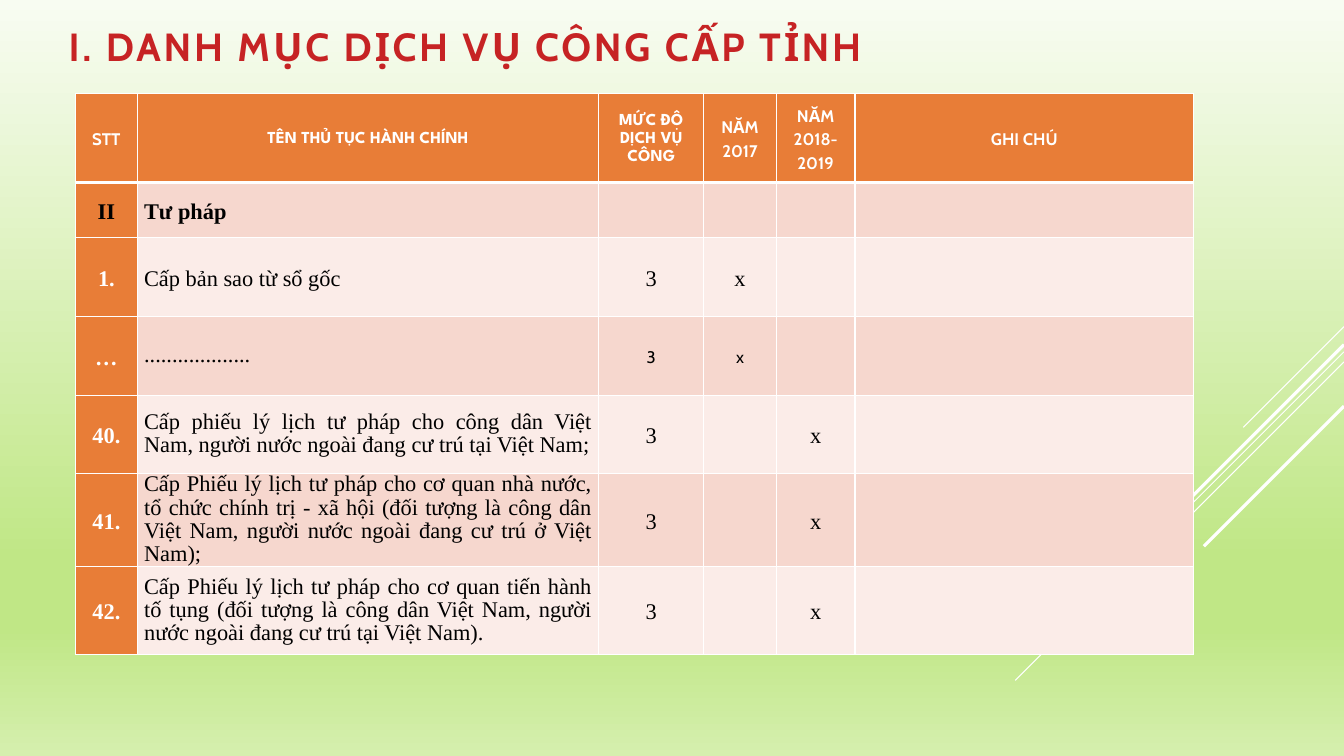
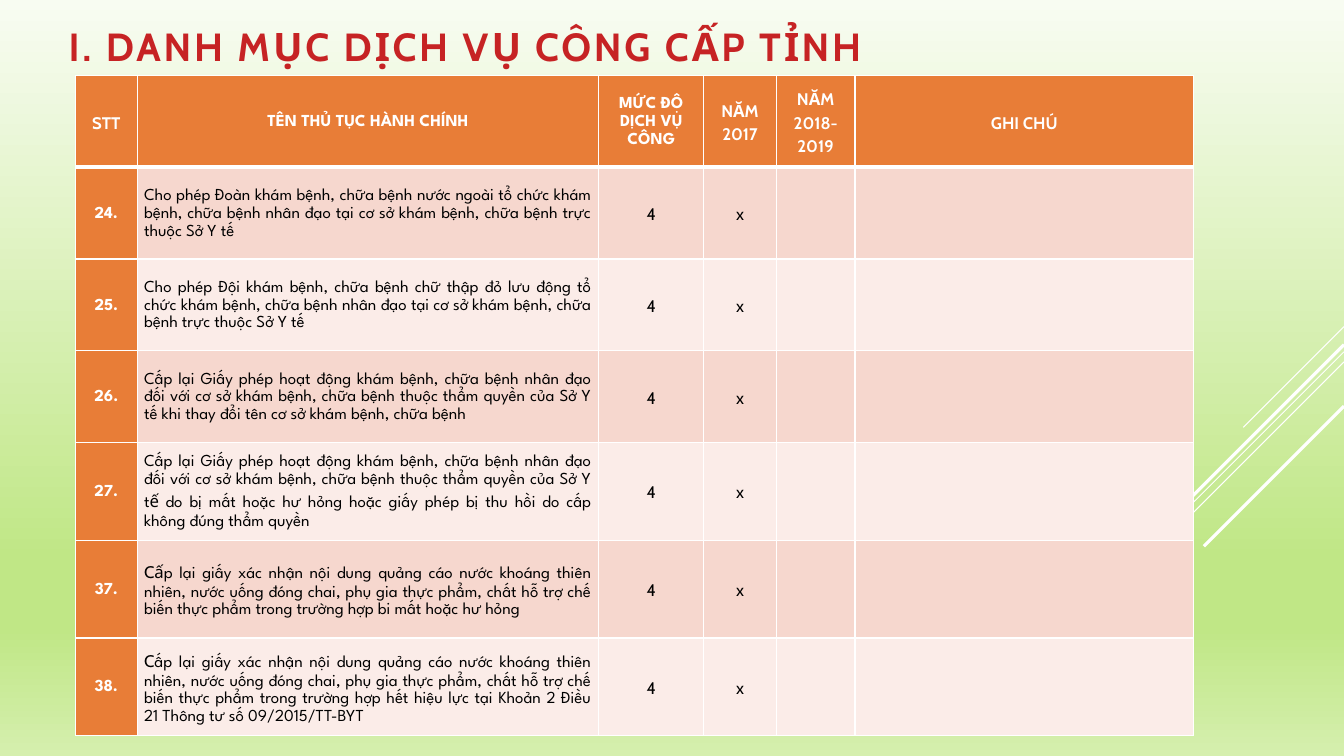
from dataclasses import dataclass, replace

from lxml import etree
from pptx import Presentation
from pptx.dml.color import RGBColor
from pptx.enum.shapes import MSO_CONNECTOR
from pptx.enum.text import MSO_ANCHOR, MSO_AUTO_SIZE, PP_ALIGN
from pptx.oxml import parse_xml
from pptx.oxml.ns import nsdecls, qn
from pptx.util import Inches, Pt

STRAIGHT = MSO_CONNECTOR.STRAIGHT
MIDDLE = MSO_ANCHOR.MIDDLE
LEFT, CENTER, JUSTIFY = PP_ALIGN.LEFT, PP_ALIGN.CENTER, PP_ALIGN.JUSTIFY


@dataclass(frozen=True)
class Theme:
    sans: str = "Cabin"
    round: str = "League Spartan"
    serif: str = "Times New Roman"
    red: str = "C62324"
    orange: str = "E87D37"
    bands: tuple = ("F6D7CE", "FBECE8")
    white: str = "FFFFFF"
    black: str = "000000"
    sky: tuple = ((0, "F8FCF2"), (74, "C0E786"), (83, "C0E786"), (100, "D5EFAE"))
    title: int = 28
    large: int = 16
    small: int = 12


T = Theme()


@dataclass(frozen=True)
class Style:
    font: str
    size: int
    color: str = T.black
    bold: bool = False
    align: int = CENTER
    lead: object = 1.15
    gap: int = 0


# Text styles
HEAD = Style(T.sans, T.small, T.white, True)
MARK = Style(T.sans, T.small)
BIG = Style(T.serif, T.large)
BIG_NUM = replace(BIG, color=T.white, bold=True, gap=6)
BIG_NAME = replace(BIG, align=JUSTIFY, lead=Pt(16.5))
NUM = replace(HEAD, font=T.round, gap=6)
NAME = Style(T.round, T.small, align=JUSTIFY, gap=6)

# Shared content
TITLE = "I. DANH MỤC DỊCH VỤ CÔNG CẤP TỈNH"
HEADS = [("STT", T.sans), ("TÊN THỦ TỤC HÀNH CHÍNH", T.round),
         ("MỨC ĐỘ DỊCH VỤ CÔNG", T.round), ("NĂM 2017", T.sans),
         ("NĂM 2018-2019", T.sans), ("GHI CHÚ", T.sans)]
COLS = [0.61, 4.58, 1.04, 0.72, 0.78, 3.36]
Y2017, Y2018 = 3, 4

# Corner rays: right end y, run along the diagonal, width
RAYS = [(3.24, 1, 0.75), (3.49, 3.26, 0.75), (3.59, 2.07, 0.75),
        (3.42, 1.91, 2.25), (4.03, 1.39, 2.25)]


@dataclass
class Row:
    num: str
    name: object
    level: str = ""
    year: int = 0
    num_style: Style = NUM
    name_style: Style = NAME
    mark: Style = MARK


def big(num, name, level="3", year=Y2018, **styles):
    base = dict(num_style=BIG_NUM, name_style=BIG_NAME, mark=BIG)
    return Row(num, name, level, year, **{**base, **styles})


JUSTICE = [
    big("II", "Tư pháp", "", 0, num_style=replace(BIG_NUM, color=T.black),
        name_style=replace(BIG, bold=True, align=JUSTIFY, gap=6)),
    big("1.", "Cấp bản sao từ sổ gốc", year=Y2017,
        name_style=replace(BIG, align=LEFT, gap=6)),
    big("…", "...................", year=Y2017, mark=MARK),
    big("40.", "Cấp phiếu lý lịch tư pháp cho công dân Việt Nam, người nước "
        "ngoài đang cư trú tại Việt Nam;"),
    big("41.", "Cấp Phiếu lý lịch tư pháp cho cơ quan nhà nước, tổ chức chính "
        "trị - xã hội (đối tượng là công dân Việt Nam, người nước ngoài đang "
        "cư trú ở Việt Nam);"),
    big("42.", "Cấp Phiếu lý lịch tư pháp cho cơ quan tiến hành tố tụng (đối "
        "tượng là công dân Việt Nam, người nước ngoài đang cư trú tại Việt "
        "Nam)."),
]

PERMIT = ("Cấp lại Giấy phép hoạt động khám bệnh, chữa bệnh nhân đạo đối với cơ "
          "sở khám bệnh, chữa bệnh thuộc thẩm quyền của Sở Y t")
ADVERT = ("lại giấy xác nhận nội dung quảng cáo nước khoáng thiên nhiên, nước "
          "uống đóng chai, phụ gia thực phẩm, chất hỗ trợ chế biến thực phẩm "
          "trong trường hợp ")
HEALTH = [Row(num, name, "4", Y2017) for num, name in [
    ("24.", "Cho phép Đoàn khám bệnh, chữa bệnh nước ngoài tổ chức khám bệnh, "
     "chữa bệnh nhân đạo tại cơ sở khám bệnh, chữa bệnh trực thuộc Sở Y tế"),
    ("25.", "Cho phép Đội khám bệnh, chữa bệnh chữ thập đỏ lưu động tổ chức "
     "khám bệnh, chữa bệnh nhân đạo tại cơ sở khám bệnh, chữa bệnh trực thuộc "
     "Sở Y tế"),
    ("26.", PERMIT + "ế khi thay đổi tên cơ sở khám bệnh, chữa bệnh"),
    ("27.", [(PERMIT, T.round), ("ế ", T.sans),
             ("do bị mất hoặc hư hỏng hoặc giấy phép bị thu hồi do cấp không "
              "đúng thẩm quyền", T.round)]),
    ("37.", [("Cấ", T.sans), ("p " + ADVERT + "bi mất hoặc hư hỏng", T.round)]),
    ("38.", [("C", T.sans),
             ("ấp " + ADVERT + "hết hiệu lực tại Khoản 2 Điều 21 Thông tư số "
              "09/2015/TT-BYT", T.round)]),
]]


def rgb(code):
    return RGBColor.from_string(code)


def write(frame, text, style):
    """Fill one paragraph; text is a string or a list of (text, font)."""
    para = frame.paragraphs[0]
    para.alignment, para.line_spacing = style.align, style.lead
    if style.gap:
        para.space_before = para.space_after = Pt(style.gap)
    parts = [(text, style.font)] if isinstance(text, str) else text
    for part, face in parts:
        run = para.add_run()
        run.text = part
        font = run.font
        font.name, font.size, font.bold = face, Pt(style.size), style.bold
        font.color.rgb = rgb(style.color)
    return para


def paint(master):
    # Background gradient, top to bottom
    master.background.fill.solid()
    old = master.element.find(".//" + qn("p:bgPr")).find(qn("a:solidFill"))
    stops = "".join(f'<a:gs pos="{pos * 1000}"><a:srgbClr val="{code}"/></a:gs>'
                    for pos, code in T.sky)
    old.getparent().replace(old, parse_xml(
        f'<a:gradFill {nsdecls("a")} rotWithShape="1"><a:gsLst>{stops}</a:gsLst>'
        '<a:lin ang="5400000" scaled="0"/></a:gradFill>'))


def add_rays(slide, right):
    for top, run, width in RAYS:
        ray = slide.shapes.add_connector(
            STRAIGHT, Inches(right), Inches(top),
            Inches(right - run), Inches(top + run))
        ray.line.color.rgb = rgb(T.white)
        ray.line.width = Pt(width)
        etree.SubElement(ray.element.spPr, qn("a:effectLst"))


def add_title(slide, left, top, width, height):
    title = slide.shapes.title
    title.left, title.top = Inches(left), Inches(top)
    title.width, title.height = Inches(width), Inches(height)
    frame = title.text_frame
    frame.auto_size, frame.word_wrap = MSO_AUTO_SIZE.NONE, True
    frame.vertical_anchor = MIDDLE
    para = write(frame, TITLE,
                 Style(T.sans, T.title, T.red, True, LEFT, 0.9))
    para.runs[0].font._element.set("spc", "200")


def edge(cell, **widths):
    props = cell._tc.get_or_add_tcPr()
    for side in "LRTB":
        line = etree.SubElement(props, qn("a:ln" + side),
                                w=str(Pt(widths.get(side, 1))))
        fill = etree.SubElement(line, qn("a:solidFill"))
        etree.SubElement(fill, qn("a:srgbClr"), val=T.white)


def set_cell(cell, fill, text="", style=MARK, **widths):
    edge(cell, **widths)
    cell.fill.solid()
    cell.fill.fore_color.rgb = rgb(fill)
    cell.vertical_anchor = MIDDLE
    cell.margin_left = cell.margin_right = Inches(0.07)
    cell.margin_top = cell.margin_bottom = 0
    if text:
        write(cell.text_frame, text, style)


def add_grid(slide, left, top, heights, rows):
    table = slide.shapes.add_table(
        len(heights), len(COLS), Inches(left), Inches(top),
        Inches(sum(COLS)), Inches(sum(heights))).table
    table.horz_banding = table.first_row = False
    for col, width in zip(table.columns, COLS):
        col.width = Inches(width)
    for line, height in zip(table.rows, heights):
        line.height = Inches(height)
    # Header row
    for col, (text, face) in enumerate(HEADS):
        set_cell(table.cell(0, col), T.orange, text, replace(HEAD, font=face), B=3)
    # Body rows
    for at, row in enumerate(rows, 1):
        band = T.bands[(at - 1) % 2]
        rule = {"T": 3} if at == 1 else {}
        set_cell(table.cell(at, 0), T.orange, row.num, row.num_style, **rule)
        set_cell(table.cell(at, 1), band, row.name, row.name_style, **rule)
        for col in range(2, len(COLS)):
            text = row.level if col == 2 else "x" if col == row.year else ""
            set_cell(table.cell(at, col), band, text, row.mark, **rule)


def add_list(deck, top, heights, rows):
    slide = deck.slides.add_slide(deck.slide_layouts[5])
    add_rays(slide, 13.33)
    add_title(slide, 0.58, 0.22, 11.13, 0.53)
    add_grid(slide, 0.75, top, heights, rows)


def main():
    deck = Presentation()
    deck.slide_width, deck.slide_height = Inches(13.33), Inches(7.5)
    paint(deck.slide_master)
    add_list(deck, 0.93, [0.88, 0.55] + [0.78] * 3 + [0.88] * 2, JUSTICE)
    add_list(deck, 0.75, [0.91] * 4 + [0.97] * 3, HEALTH)
    deck.save("out.pptx")


if __name__ == "__main__":
    main()
